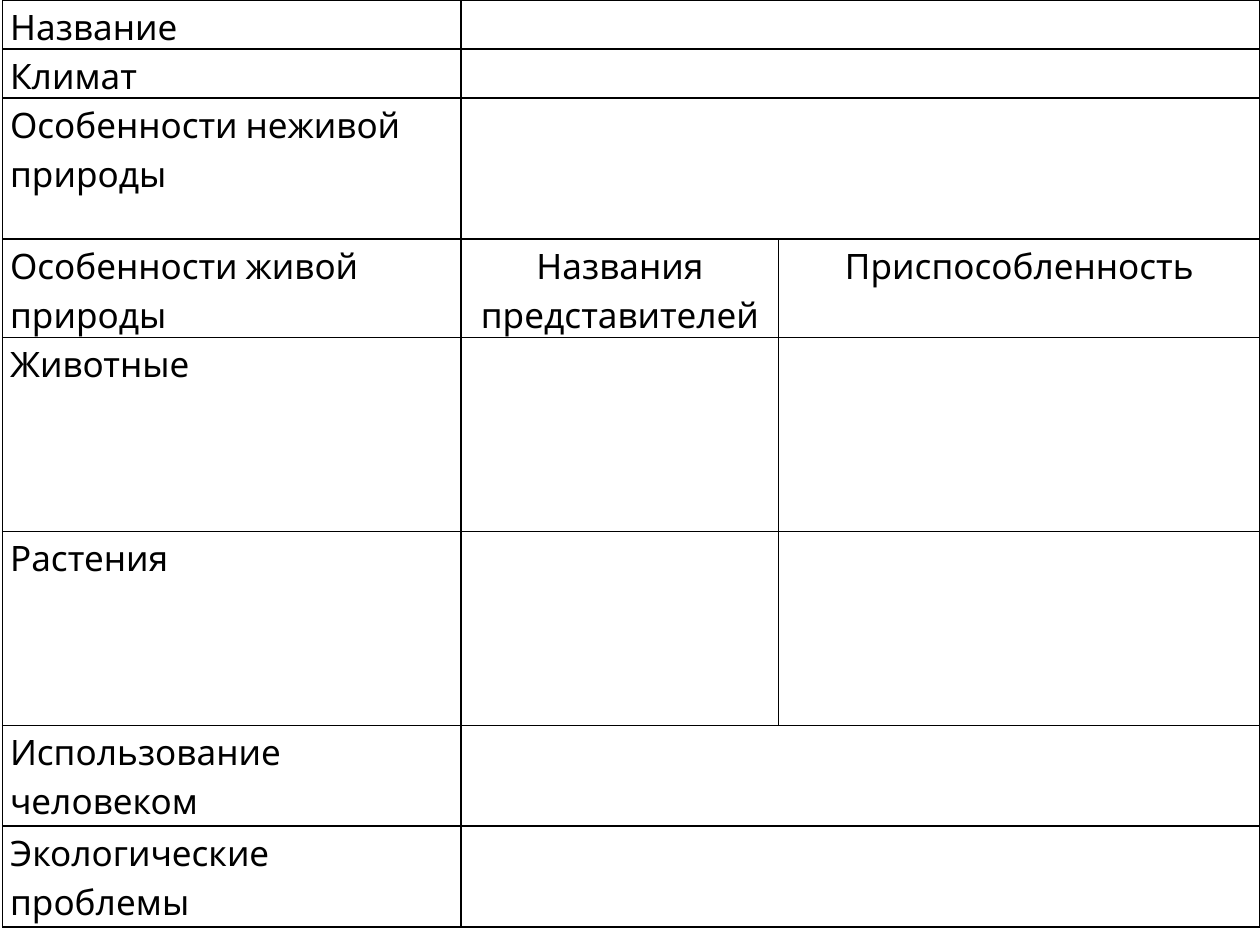
from dataclasses import dataclass

from lxml import etree
from pptx import Presentation
from pptx.dml.color import RGBColor
from pptx.enum import text
from pptx.oxml import ns
from pptx.util import Inches, Pt


@dataclass(frozen=True)
class Theme:
    font: str = "Cabin"
    size: int = 20
    ink: str = "000000"
    border: int = 1
    spacing: float = 1.15


THEME = Theme()
COLUMN_WIDTHS = (3.64, 2.52, 3.82)
ROWS = (
    (0.38, ("Название",)),
    (0.38, ("Климат",)),
    (1.12, ("Особенности неживой природы",)),
    (0.76, ("Особенности живой природы", "Названия представителей", "Приспособленность")),
    (1.54, ("Животные", "", "")),
    (1.54, ("Растения", "", "")),
    (0.8, ("Использование человеком",)),
    (0.8, ("Экологические проблемы",)),
)


def write_text(cell, wording, align=text.PP_ALIGN.LEFT, size=THEME.size, color=THEME.ink):
    paragraph = cell.text_frame.paragraphs[0]
    paragraph.alignment = align
    paragraph.line_spacing = THEME.spacing
    run = paragraph.add_run()
    run.text = wording
    run.font.name = THEME.font
    run.font.size = Pt(size)
    run.font.color.rgb = RGBColor.from_string(color)


def draw_borders(cell):
    properties = cell._tc.get_or_add_tcPr()
    for position, side in enumerate(("lnL", "lnR", "lnT", "lnB")):
        line = etree.Element(ns.qn(f"a:{side}"), w=str(Pt(THEME.border)))
        fill = etree.SubElement(line, ns.qn("a:solidFill"))
        etree.SubElement(fill, ns.qn("a:srgbClr"), val=THEME.ink)
        properties.insert(position, line)


def format_cell(cell):
    cell.margin_left = cell.margin_right = Inches(0.06)
    cell.margin_top = cell.margin_bottom = 0
    cell.fill.background()
    draw_borders(cell)


def add_zone_table(slide):
    heights = [height for height, _ in ROWS]
    frame = slide.shapes.add_table(
        len(ROWS), len(COLUMN_WIDTHS), Inches(0.02), 0,
        Inches(sum(COLUMN_WIDTHS)), Inches(sum(heights)))
    table = frame.table
    table.first_row = table.horz_banding = False
    for column, width in zip(table.columns, COLUMN_WIDTHS):
        column.width = Inches(width)
    for index, (height, wordings) in enumerate(ROWS):
        table.rows[index].height = Inches(height)
        for cell in table.rows[index].cells:
            format_cell(cell)
        if len(wordings) == 1:
            table.cell(index, 1).merge(table.cell(index, 2))
        for column, wording in enumerate(wordings):
            if wording:
                align = text.PP_ALIGN.CENTER if column else text.PP_ALIGN.LEFT
                write_text(table.cell(index, column), wording, align=align)


def main():
    deck = Presentation()
    deck.slide_width, deck.slide_height = Inches(10), Inches(7.5)
    slide = deck.slides.add_slide(deck.slide_layouts[6])
    add_zone_table(slide)
    deck.save("out.pptx")


if __name__ == "__main__":
    main()
